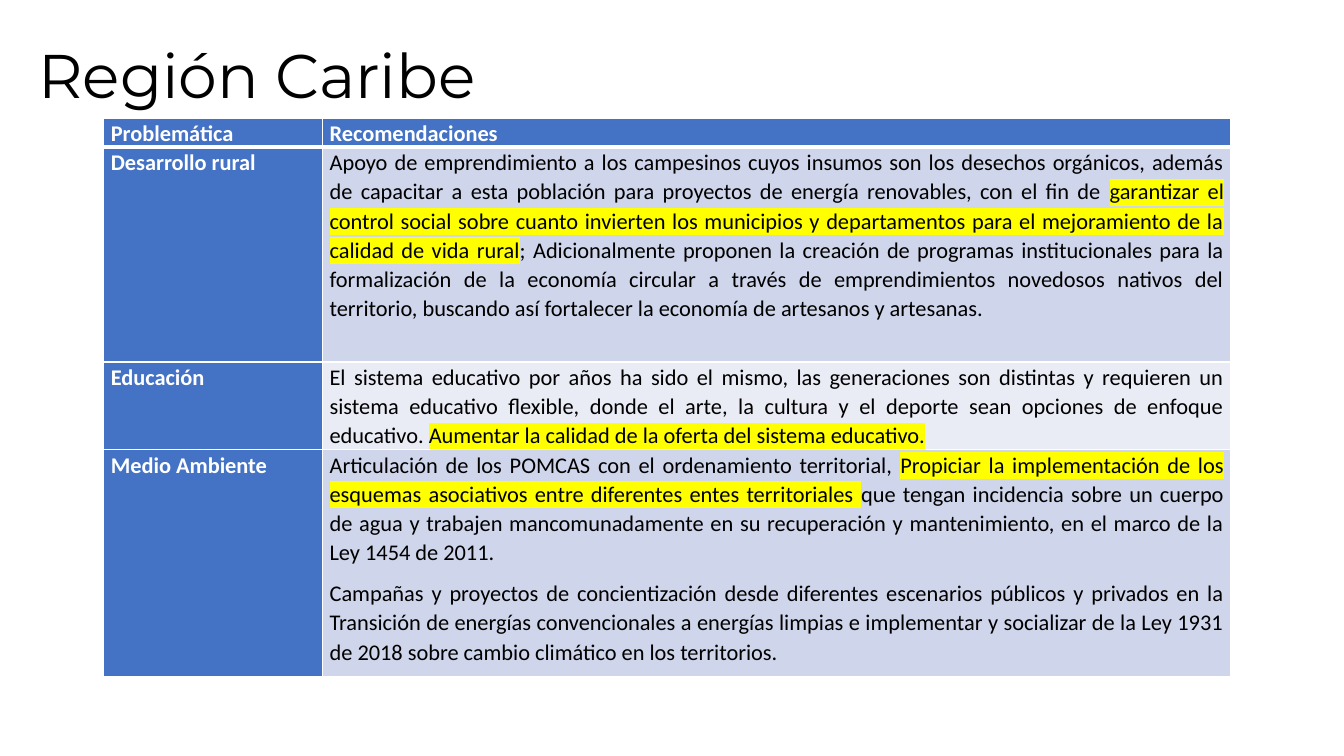
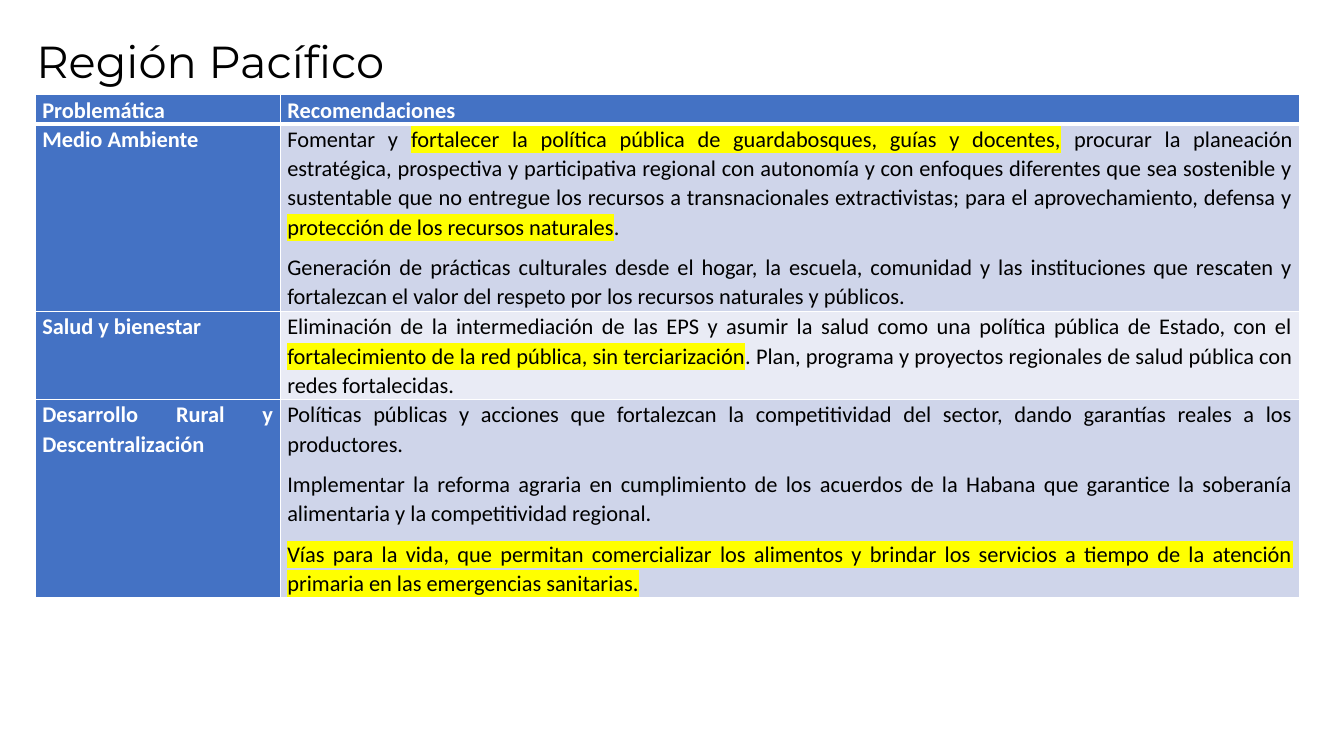
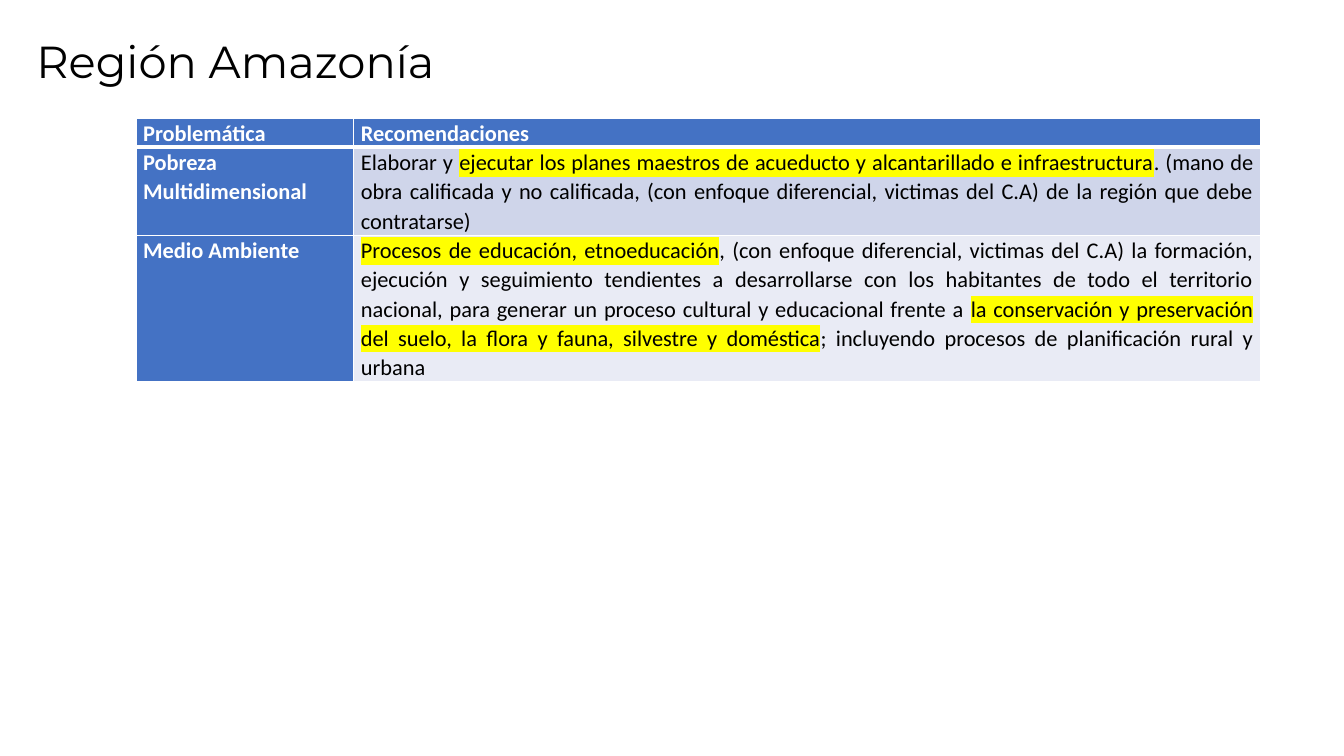
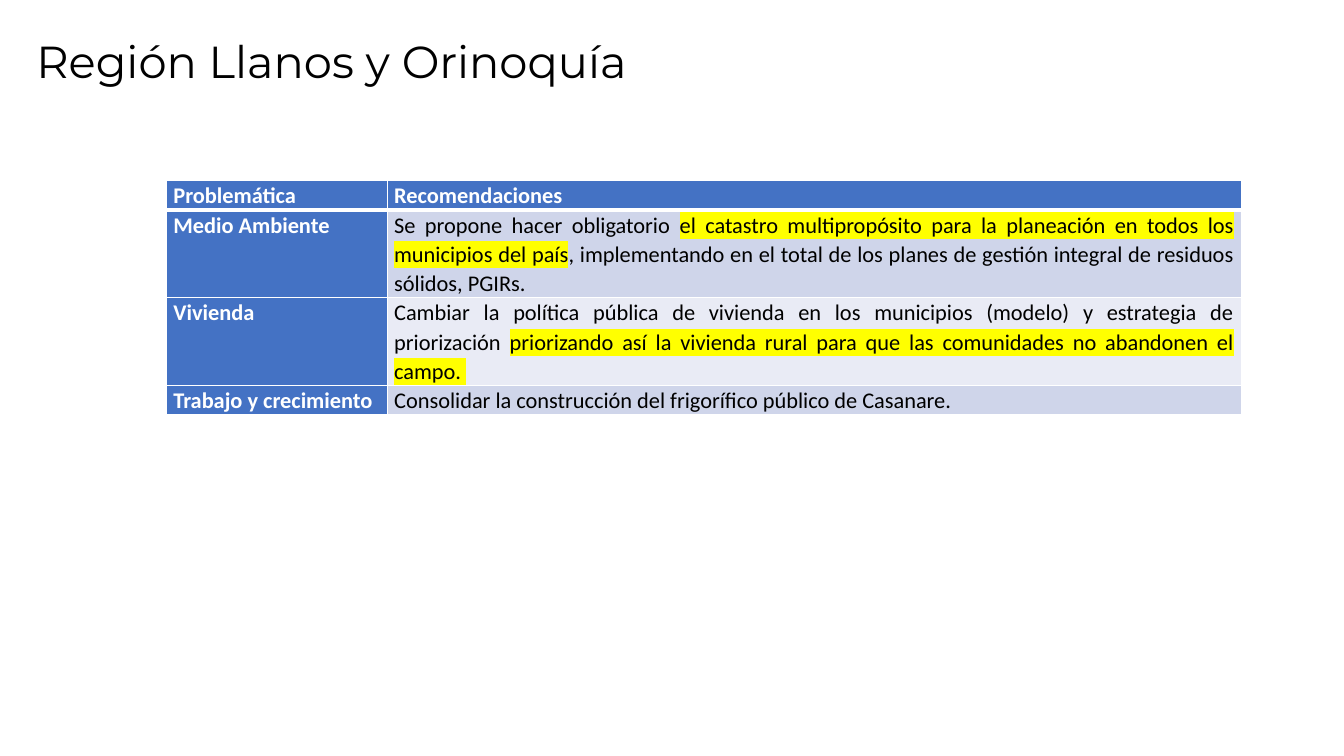
from dataclasses import dataclass

from lxml import etree
from pptx import Presentation
from pptx import util as u
from pptx.dml.color import RGBColor
from pptx.enum import text
from pptx.oxml.ns import qn


@dataclass(frozen=True)
class Theme:
    ink: str = "000000"
    white: str = "FFFFFF"
    header: str = "4472C4"
    bands: tuple = ("CFD5EA", "E9EBF5")
    marker: str = "FFFF00"
    title_font: str = "Montserrat"
    body_font: str = "Calibri"
    title_size: int = 32
    body_size: int = 16
    border: float = 1
    header_border: float = 3


THEME = Theme()

# Content: text between asterisks is highlighted
HEADINGS = ("Problemática", ["Recomendaciones"])
HEADING_HEIGHT = 0.29
TITLE_BOX = (0.26, 0.34, 9.98, 0.71)

REGIONS = [
    {
        "title": "Región Caribe",
        "title_size": 44,
        "title_at": (0.28, 0.4),
        "table_at": (1.03, 1.17),
        "columns": (2.17, 9.01),
        "heights": (2.13, 0.87, 2.25),
        "rows": [
            ("Desarrollo rural", [
                "Apoyo de emprendimiento a los campesinos cuyos insumos son los desechos orgánicos, "
                "además de capacitar a esta población para proyectos de energía renovables, con el fin de "
                "*garantizar el control social sobre cuanto invierten los municipios y departamentos para "
                "el mejoramiento de la calidad de vida rural*; Adicionalmente proponen la creación de "
                "programas institucionales para la formalización de la economía circular a través de "
                "emprendimientos novedosos nativos del territorio, buscando así fortalecer la economía "
                "de artesanos y artesanas."]),
            ("Educación", [
                "El sistema educativo por años ha sido el mismo, las generaciones son distintas y "
                "requieren un sistema educativo flexible, donde el arte, la cultura y el deporte sean "
                "opciones de enfoque educativo. "
                "*Aumentar la calidad de la oferta del sistema educativo.*"]),
            ("Medio Ambiente", [
                "Articulación de los POMCAS con el ordenamiento territorial, *Propiciar la "
                "implementación de los esquemas asociativos entre diferentes entes territoriales *que "
                "tengan incidencia sobre un cuerpo de agua y trabajen mancomunadamente en su "
                "recuperación y mantenimiento, en el marco de la Ley 1454 de 2011.",
                "Campañas y proyectos de concientización desde diferentes escenarios públicos y "
                "privados en la Transición de energías convencionales a energías limpias e implementar "
                "y socializar de la Ley 1931 de 2018 sobre cambio climático en los territorios."]),
        ],
    },
    {
        "title": "Región Pacífico",
        "table_at": (0.35, 0.94),
        "columns": (2.43, 10.11),
        "heights": (1.86, 0.87, 1.96),
        "rows": [
            ("Medio Ambiente", [
                "Fomentar y *fortalecer la política pública de guardabosques, guías y docentes,* "
                "procurar la planeación estratégica, prospectiva y participativa regional con autonomía "
                "y con enfoques diferentes que sea sostenible y sustentable que no entregue los recursos "
                "a transnacionales extractivistas; para el aprovechamiento, defensa y "
                "*protección de los recursos naturales*.",
                "Generación de prácticas culturales desde el hogar, la escuela, comunidad y las "
                "instituciones que rescaten y fortalezcan el valor del respeto por los recursos "
                "naturales y públicos."]),
            ("Salud y bienestar", [
                "Eliminación de la intermediación de las EPS y asumir la salud como una política pública "
                "de Estado, con el *fortalecimiento de la red pública, sin terciarización*. Plan, "
                "programa y proyectos regionales de salud pública con redes fortalecidas."]),
            ("Desarrollo Rural y Descentralización", [
                "Políticas públicas y acciones que fortalezcan la competitividad del sector, dando "
                "garantías reales a los productores.",
                "Implementar la reforma agraria en cumplimiento de los acuerdos de la Habana que "
                "garantice la soberanía alimentaria y la competitividad regional.",
                "*Vías para la vida, que permitan comercializar los alimentos y brindar los servicios a "
                "tiempo de la atención primaria en las emergencias sanitarias.*"]),
        ],
    },
    {
        "title": "Región Amazonía",
        "table_at": (1.35, 1.17),
        "columns": (2.16, 8.99),
        "heights": (0.87, 1.45),
        "rows": [
            ("Pobreza Multidimensional", [
                "Elaborar y *ejecutar los planes maestros de acueducto y alcantarillado e "
                "infraestructura*. (mano de obra calificada y no calificada, (con enfoque diferencial, "
                "victimas del C.A) de la región que debe contratarse)"]),
            ("Medio Ambiente", [
                "*Procesos de educación, etnoeducación*, (con enfoque diferencial, victimas del C.A) la "
                "formación, ejecución y seguimiento tendientes a desarrollarse con los habitantes de "
                "todo el territorio nacional, para generar un proceso cultural y educacional frente a "
                "*la conservación y preservación del suelo, la flora y fauna, silvestre y doméstica*; "
                "incluyendo procesos de planificación rural y urbana"]),
        ],
    },
    {
        "title": "Región Llanos y Orinoquía",
        "table_at": (1.65, 1.79),
        "columns": (2.19, 8.47),
        "heights": (0.87, 0.87, 0.29),
        "rows": [
            ("Medio Ambiente", [
                "Se propone hacer obligatorio *el catastro multipropósito para la planeación en todos "
                "los municipios del país*, implementando en el total de los planes de gestión integral "
                "de residuos sólidos, PGIRs."]),
            ("Vivienda", [
                "Cambiar la política pública de vivienda en los municipios (modelo) y estrategia de "
                "priorización *priorizando así la vivienda rural para que las comunidades no abandonen "
                "el campo. *"]),
            ("Trabajo y crecimiento", [
                "Consolidar la construcción del frigorífico público de Casanare."]),
        ],
    },
]


def write(frame, paragraphs, *, size=THEME.body_size, font=THEME.body_font, color=THEME.ink,
          bold=False, align=text.PP_ALIGN.JUSTIFY, spacing=1.07, after=8):
    """Fill a text frame; every second piece between asterisks is highlighted."""
    for index, content in enumerate(paragraphs):
        paragraph = frame.add_paragraph() if index else frame.paragraphs[0]
        paragraph.alignment = align
        paragraph.line_spacing = spacing
        paragraph.space_after = u.Pt(after)
        for part, words in enumerate(content.split("*")):
            if not words:
                continue
            run = paragraph.add_run()
            run.text = words
            run.font.size = u.Pt(size)
            run.font.bold = bold
            run.font.color.rgb = RGBColor.from_string(color)
            run.font.name = font
            if part % 2:
                highlight = etree.Element(qn("a:highlight"))
                etree.SubElement(highlight, qn("a:srgbClr"), val=THEME.marker)
                run.font._element.find(qn("a:latin")).addprevious(highlight)


def set_borders(cell, top, bottom):
    widths = {"L": THEME.border, "R": THEME.border, "T": top, "B": bottom}
    properties = cell._tc.get_or_add_tcPr()
    for side, width in widths.items():
        line = etree.SubElement(properties, qn(f"a:ln{side}"), w=str(u.Pt(width)))
        fill = etree.SubElement(line, qn("a:solidFill"))
        etree.SubElement(fill, qn("a:srgbClr"), val=THEME.white)


def add_recommendations(slide, region):
    rows = [HEADINGS, *region["rows"]]
    heights = (HEADING_HEIGHT, *region["heights"])
    columns = region["columns"]
    box = (*region["table_at"], sum(columns), sum(heights))
    table = slide.shapes.add_table(len(rows), len(columns), *map(u.Inches, box)).table
    table.first_col = True
    for column, width in zip(table.columns, columns):
        column.width = u.Inches(width)

    for r, (problem, advice) in enumerate(rows):
        table.rows[r].height = u.Inches(heights[r])
        for c, paragraphs in enumerate(([problem], advice)):
            cell = table.cell(r, c)
            is_heading = r == 0 or c == 0
            cell.margin_left = cell.margin_right = u.Inches(0.07)
            cell.margin_top = cell.margin_bottom = 0
            set_borders(cell,
                        top=THEME.header_border if r == 1 else THEME.border,
                        bottom=THEME.header_border if r == 0 else THEME.border)
            fill = THEME.header if is_heading else THEME.bands[(r - 1) % 2]
            cell.fill.solid()
            cell.fill.fore_color.rgb = RGBColor.from_string(fill)
            write(cell.text_frame, paragraphs, bold=is_heading,
                  color=THEME.white if is_heading else THEME.ink)


def add_title(slide, region):
    title = slide.shapes.title
    left, top = region.get("title_at", TITLE_BOX[:2])
    title.left, title.top = u.Inches(left), u.Inches(top)
    title.width, title.height = map(u.Inches, TITLE_BOX[2:])
    frame = title.text_frame
    frame.word_wrap = True
    frame.auto_size = text.MSO_AUTO_SIZE.NONE
    frame.vertical_anchor = text.MSO_ANCHOR.TOP
    write(frame, [region["title"]], size=region.get("title_size", THEME.title_size),
          font=THEME.title_font, align=text.PP_ALIGN.LEFT, spacing=0.9, after=0)


def main():
    deck = Presentation()
    deck.slide_width, deck.slide_height = u.Inches(13.33), u.Inches(7.5)
    title_only = deck.slide_layouts[5]
    for region in REGIONS:
        slide = deck.slides.add_slide(title_only)
        add_title(slide, region)
        add_recommendations(slide, region)
    deck.save("out.pptx")


if __name__ == "__main__":
    main()
